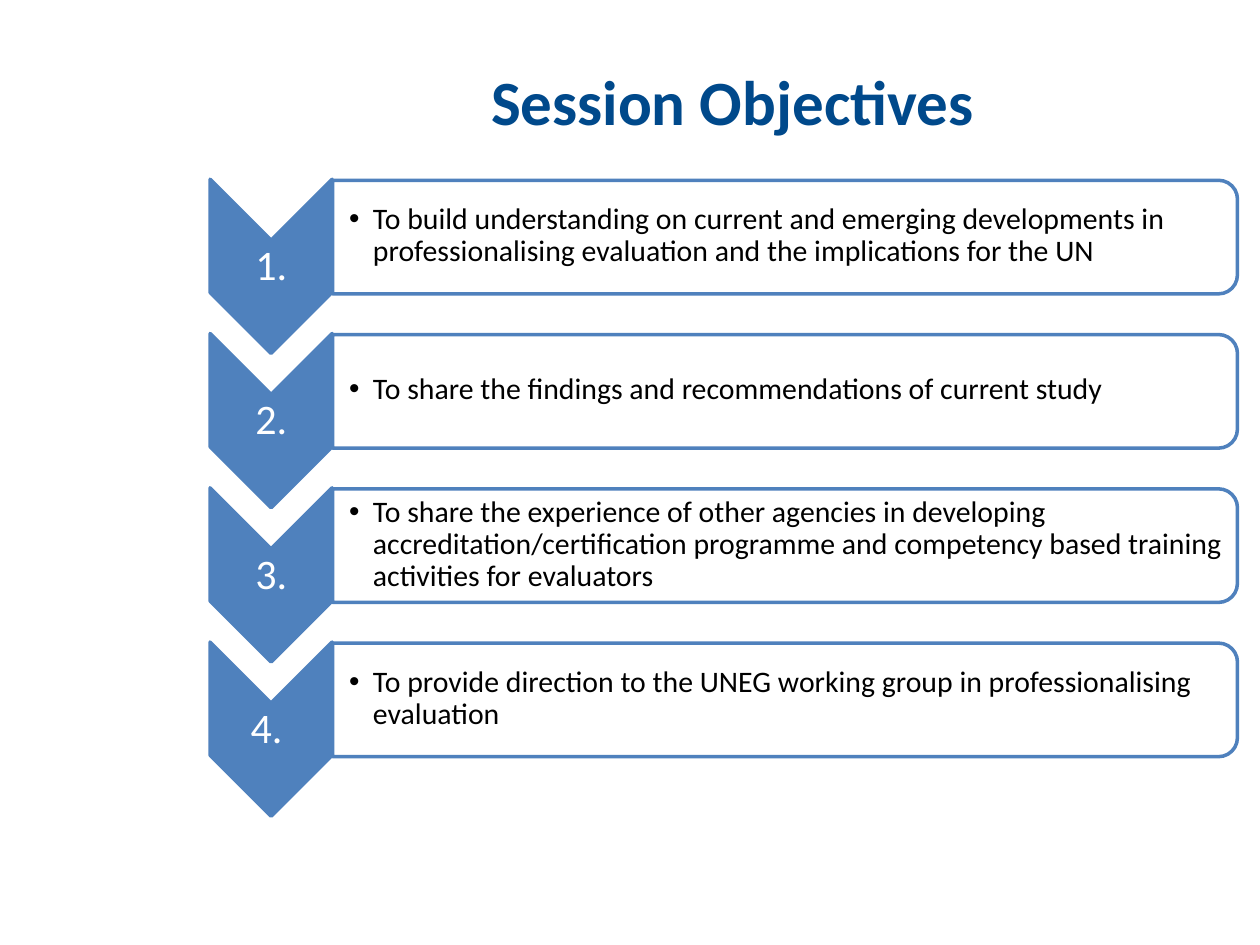
"""Build the Session Objectives slide with four numbered goals."""
from lxml.etree import SubElement
from pptx import Presentation
from pptx.dml.color import RGBColor
from pptx.enum.shapes import MSO_SHAPE
from pptx.enum.text import MSO_ANCHOR, PP_ALIGN
from pptx.oxml.ns import qn
from pptx.util import Cm, Pt

NAVY = RGBColor(0x00, 0x49, 0x8B)
BLUE = RGBColor(0x4F, 0x81, 0xBD)
WHITE = RGBColor(0xFF, 0xFF, 0xFF)
BLACK = RGBColor(0x00, 0x00, 0x00)
PITCH = 3.11

GOALS = [
    ("1.", "To build understanding on current and emerging developments in "
     "professionalising evaluation and the implications for the UN"),
    ("2.", "To share the findings and recommendations of current study"),
    ("3.", "To share the experience of other agencies in developing "
     "accreditation/certification programme and competency based training "
     "activities for evaluators"),
    ("4. ", "To provide direction to the UNEG working group in "
     "professionalising evaluation"),
]

deck = Presentation()
deck.slide_width, deck.slide_height = Cm(25.4), Cm(19.05)
slide = deck.slides.add_slide(deck.slide_layouts[6])


def add_text(text, left, top, width, height, size, color, inset, side):
    box = slide.shapes.add_textbox(Cm(left), Cm(top), Cm(width), Cm(height))
    frame = box.text_frame
    frame.word_wrap = True
    frame.vertical_anchor = MSO_ANCHOR.MIDDLE
    frame.margin_left = Cm(side)
    frame.margin_right = frame.margin_top = frame.margin_bottom = Cm(inset)
    frame.text = text
    para = frame.paragraphs[0]
    font = para.runs[0].font
    font.name, font.size = "Calibri", Pt(size)
    font.color.rgb = color
    return para


def add_block(kind, left, top, width, height, color):
    shape = slide.shapes.add_shape(kind, Cm(left), Cm(top), Cm(width), Cm(height))
    shape.rotation = 90
    shape.shadow.inherit = False
    shape.fill.solid()
    shape.fill.fore_color.rgb = color
    shape.line.color.rgb = BLUE
    shape.line.width = Pt(2)
    return shape


title = add_text("Session Objectives", 4.47, 0.43, 20.47, 3.18, 36, NAVY, 0.13, 0.25)
title.alignment = PP_ALIGN.CENTER
title.runs[0].font.bold = True

for row, (label, goal) in enumerate(GOALS):
    drop = row * PITCH
    add_block(MSO_SHAPE.CHEVRON, 3.71, 4.14 + drop, 3.51, 2.46, BLUE)
    mark = add_text(label, 4.24, 4.85 + drop, 2.46, 1.07, 24, WHITE, 0.05, 0.05)
    mark.alignment = PP_ALIGN.CENTER
    mark.line_spacing = 0.9

    panel = add_block(MSO_SHAPE.ROUND_2_SAME_RECTANGLE,
                      14.68, -4.34 + drop, 2.29, 18.24, WHITE)
    tint = panel.fill._xPr.find(qn("a:solidFill"))[0]
    SubElement(tint, qn("a:alpha"), val="90000")

    item = add_text(goal, 6.71, 3.73 + drop, 18.14, 2.06, 17, BLACK, 0.03, 0.33)
    item.level = 1
    item.line_spacing = 0.9
    props = item._p.get_or_add_pPr()
    props.set("marL", str(Cm(0.48)))
    props.set("indent", str(Cm(-0.48)))
    SubElement(props, qn("a:buFont"), typeface="Arial")
    SubElement(props, qn("a:buChar"), char="•")

deck.save("out.pptx")
